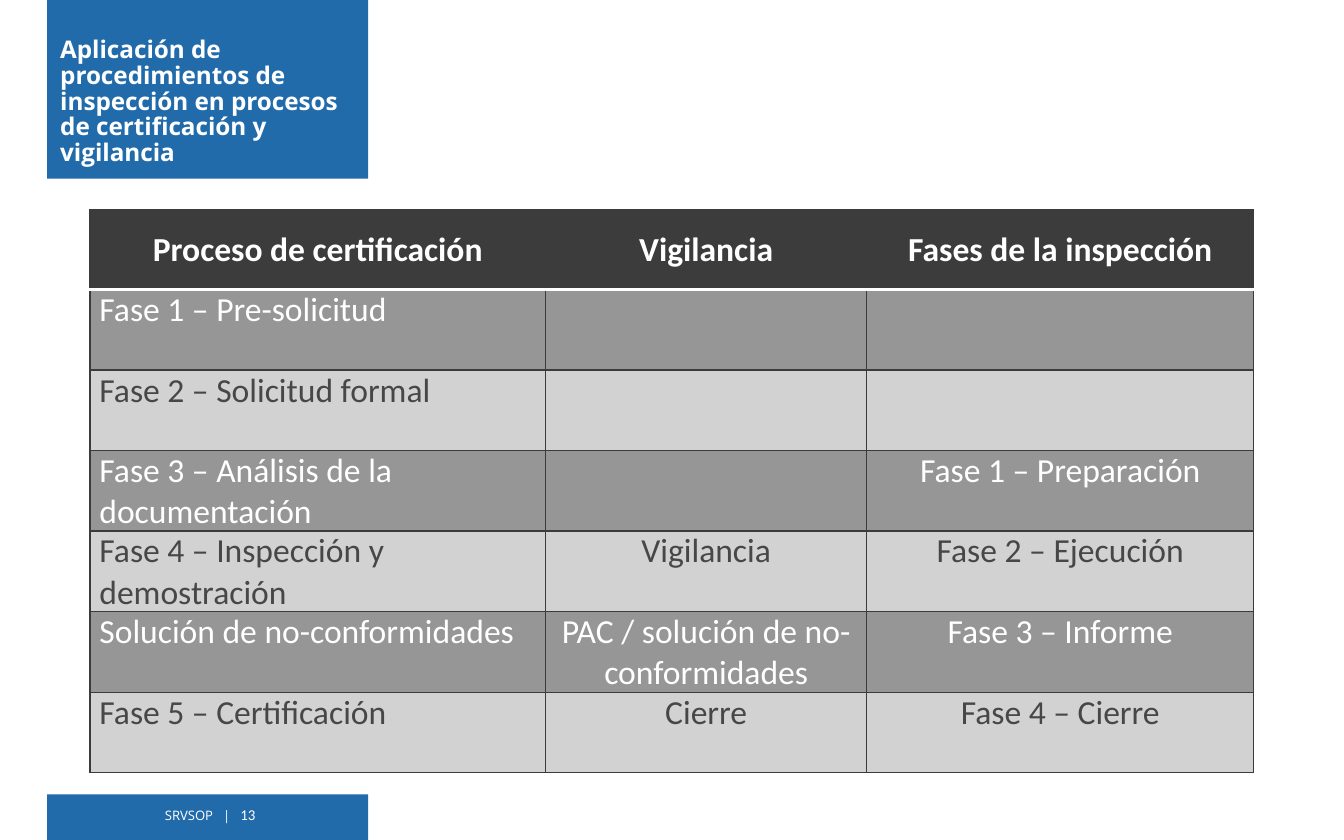
"""Build a slide comparing certification, surveillance and inspection phases."""
from lxml import etree
from pptx import Presentation
from pptx.dml.color import RGBColor
from pptx.enum.shapes import MSO_SHAPE
from pptx.enum.text import MSO_ANCHOR, PP_ALIGN
from pptx.oxml.ns import qn
from pptx.util import Emu, Inches, Pt

RECTANGLE = MSO_SHAPE.RECTANGLE
TOP, MIDDLE, BOTTOM = MSO_ANCHOR.TOP, MSO_ANCHOR.MIDDLE, MSO_ANCHOR.BOTTOM
LEFT, CENTER, RIGHT = PP_ALIGN.LEFT, PP_ALIGN.CENTER, PP_ALIGN.RIGHT

BLUE = RGBColor(0x21, 0x6B, 0xAB)
WHITE = RGBColor(0xFF, 0xFF, 0xFF)
CHARCOAL = RGBColor(0x3C, 0x3C, 0x3C)
BORDER = RGBColor(0x3B, 0x3B, 0x3B)
TEXT_GRAY = RGBColor(0x47, 0x47, 0x47)
DARK_BAND = RGBColor(0x96, 0x96, 0x96)
LIGHT_BAND = RGBColor(0xD2, 0xD2, 0xD2)

TITLE = "Aplicación de procedimientos de inspección en procesos de certificación y vigilancia"
FOOTER = [("SRVSOP   |   ", "Open Sans", 7), ("13", "Calibri", 8)]
ROWS = [
    ("Proceso de certificación", "Vigilancia", "Fases de la inspección"),
    ("Fase 1 – Pre-solicitud", "", ""),
    ("Fase 2 – Solicitud formal", "", ""),
    ("Fase 3 – Análisis de la documentación", "", "Fase 1 – Preparación"),
    ("Fase 4 – Inspección y demostración", "Vigilancia", "Fase 2 – Ejecución"),
    ("Solución de no-conformidades", "PAC / solución de no-conformidades", "Fase 3 – Informe"),
    ("Fase 5 – Certificación", "Cierre", "Fase 4 – Cierre"),
]
COLUMN_WIDTHS = (3.39, 2.39, 2.88)
TABLE_LEFT, TABLE_TOP, TABLE_HEIGHT = 0.67, 1.56, 4.18
BAND_LEFT, BAND_WIDTH = 0.35, 2.39
BANDS = [(-0.01, 1.34), (5.91, 0.35)]
THIN, THICK = 0.75, 2


def add_run(paragraph, text, font_name, size, color, bold=False):
    run = paragraph.add_run()
    run.text = text
    font = run.font
    font.name, font.size, font.bold = font_name, Pt(size), bold
    font.color.rgb = color


def add_band(slide, top, height):
    band = slide.shapes.add_shape(
        RECTANGLE, Inches(BAND_LEFT), Inches(top), Inches(BAND_WIDTH), Inches(height))
    band.shadow.inherit = False
    band.fill.solid()
    band.fill.fore_color.rgb = BLUE
    band.line.fill.background()


def add_text(slide, box, runs, anchor, alignment, spacing, bold):
    frame = slide.shapes.add_textbox(*map(Inches, box)).text_frame
    frame.word_wrap = True
    frame.vertical_anchor = anchor
    paragraph = frame.paragraphs[0]
    paragraph.alignment = alignment
    paragraph.line_spacing = spacing
    for text, font_name, size in runs:
        add_run(paragraph, text, font_name, size, WHITE, bold)


def set_borders(cell, is_header, is_first_body_row):
    rule = (WHITE, THICK)
    line = (BORDER, THIN)
    sides = {
        "a:lnL": line,
        "a:lnR": line,
        "a:lnT": rule if is_first_body_row else line,
        "a:lnB": rule if is_header else line,
    }
    properties = cell._tc.get_or_add_tcPr()
    for position, (tag, (color, width)) in enumerate(sides.items()):
        border = etree.Element(qn(tag), w=str(Pt(width)))
        fill = etree.SubElement(border, qn("a:solidFill"))
        etree.SubElement(fill, qn("a:srgbClr"), val=str(color))
        properties.insert(position, border)


def row_colors(row):
    if row == 0:
        return CHARCOAL, WHITE
    return (DARK_BAND, WHITE) if row % 2 else (LIGHT_BAND, TEXT_GRAY)


def add_phase_table(slide):
    table = slide.shapes.add_table(
        len(ROWS), len(COLUMN_WIDTHS), Inches(TABLE_LEFT), Inches(TABLE_TOP),
        Inches(sum(COLUMN_WIDTHS)), Inches(TABLE_HEIGHT)).table
    for column, width in zip(table.columns, COLUMN_WIDTHS):
        column.width = Inches(width)
    for row, texts in enumerate(ROWS):
        is_header = row == 0
        fill_color, text_color = row_colors(row)
        table.rows[row].height = Emu(Inches(TABLE_HEIGHT) // len(ROWS))
        for column, text in enumerate(texts):
            cell = table.cell(row, column)
            cell.margin_left = cell.margin_right = Inches(0.07)
            cell.margin_top = cell.margin_bottom = 0
            cell.vertical_anchor = MIDDLE if is_header else TOP
            cell.fill.solid()
            cell.fill.fore_color.rgb = fill_color
            set_borders(cell, is_header, row == 1)
            if text:
                paragraph = cell.text_frame.paragraphs[0]
                paragraph.alignment = CENTER if is_header or column else LEFT
                add_run(paragraph, text, "Calibri", 18, text_color, is_header)


def main():
    presentation = Presentation()
    presentation.slide_width = Inches(10)
    presentation.slide_height = Inches(6.25)
    slide = presentation.slides.add_slide(presentation.slide_layouts[6])
    for top, height in BANDS:
        add_band(slide, top, height)
    add_text(slide, (1.06, 5.98, 0.94, 0.2), FOOTER, MIDDLE, RIGHT, 0.7, False)
    add_text(slide, (BAND_LEFT, 0.07, 2.36, 1.22), [(TITLE, "Open Sans", 13)],
             BOTTOM, LEFT, 0.88, True)
    add_phase_table(slide)
    presentation.save("out.pptx")


if __name__ == "__main__":
    main()
